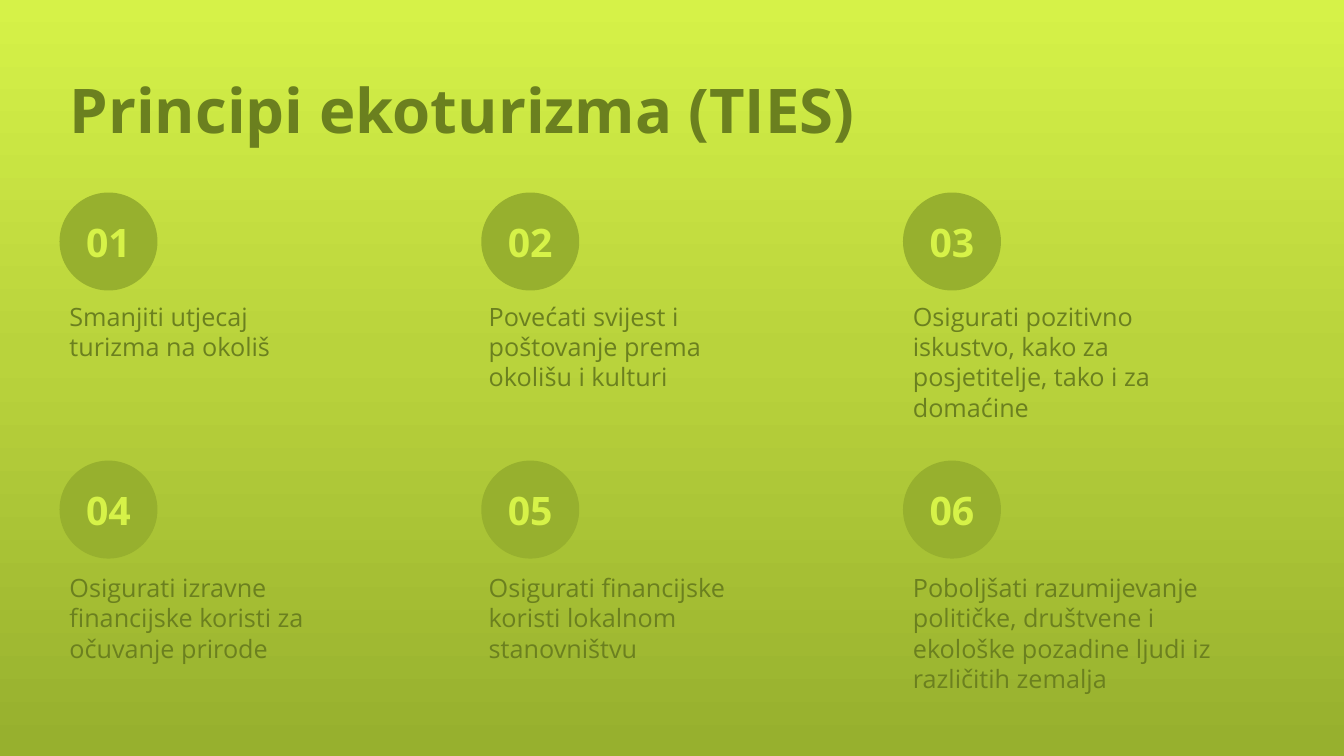
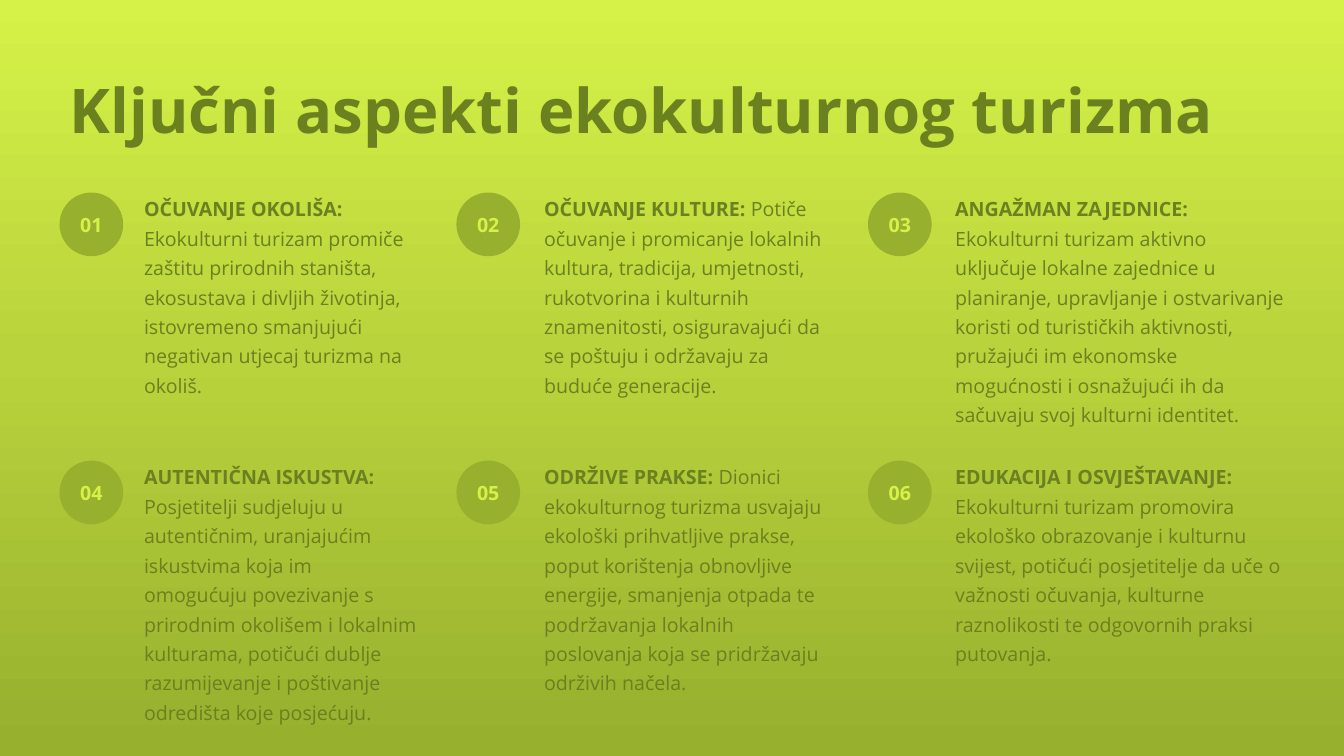
from copy import deepcopy
from dataclasses import dataclass

from pptx import Presentation
from pptx.dml.color import RGBColor
from pptx.enum.shapes import MSO_SHAPE
from pptx.enum.text import MSO_ANCHOR, MSO_AUTO_SIZE, PP_ALIGN
from pptx.oxml.ns import qn
from pptx.util import Pt


@dataclass(frozen=True)
class Theme:
    font: str = "Open Sans"
    lime: str = "D6F248"
    olive: str = "97B02E"
    text: str = "6B801F"
    gradient: tuple = ((0, "D6F248"), (47, "B9D33C"), (99, "97B02E"))
    title_size: int = 44


@dataclass(frozen=True)
class Grid:
    """Column and row positions, in points, of numbered badges and their texts."""
    badge_lefts: tuple
    badge_tops: tuple
    badge_size: float
    badge_font: int
    text_lefts: tuple
    text_tops: tuple
    text_widths: tuple
    text_height: float
    text_font: int
    line_spacing: float


THEME = Theme()
SLIDE_SIZE = (960, 540)
TITLE_BOX = (42.5, 28.8, 850, 104.4)
BADGE_TOPS = (137.5, 329)

PRINCIPLES_GRID = Grid(
    badge_lefts=(42.5, 343.75, 645), badge_tops=BADGE_TOPS,
    badge_size=70, badge_font=28,
    text_lefts=(42.5, 342, 645), text_tops=(211.7, 405.4),
    text_widths=(192, 209, 238), text_height=94, text_font=18, line_spacing=1)

ASPECTS_GRID = Grid(
    badge_lefts=(42.5, 326, 620), badge_tops=BADGE_TOPS,
    badge_size=45.5, badge_font=14,
    text_lefts=(95.8, 381.6, 675.2), text_tops=(133.2, 324.7),
    text_widths=(210, 219, 250), text_height=175, text_font=14, line_spacing=1.25)

# Each item is a list of paragraphs; each paragraph is a (bold lead, body) pair.
PRINCIPLES = [
    [("", "Smanjiti utjecaj turizma na okoliš")],
    [("", "Povećati svijest i poštovanje prema okolišu i kulturi")],
    [("", "Osigurati pozitivno iskustvo, kako za posjetitelje, tako i za domaćine")],
    [("", "Osigurati izravne financijske koristi za očuvanje prirode")],
    [("", "Osigurati financijske koristi lokalnom stanovništvu")],
    [("", "Poboljšati razumijevanje političke, društvene i"),
     ("", "ekološke pozadine ljudi iz različitih zemalja")],
]
ASPECTS = [
    [("OČUVANJE OKOLIŠA: ",
      "Ekokulturni turizam promiče zaštitu prirodnih staništa, ekosustava i divljih "
      "životinja, istovremeno smanjujući negativan utjecaj turizma na okoliš.")],
    [("OČUVANJE KULTURE: ",
      "Potiče očuvanje i promicanje lokalnih kultura, tradicija, umjetnosti, rukotvorina "
      "i kulturnih znamenitosti, osiguravajući da se poštuju i održavaju za buduće "
      "generacije.")],
    [("ANGAŽMAN ZAJEDNICE: ",
      "Ekokulturni turizam aktivno uključuje lokalne zajednice u planiranje, upravljanje "
      "i ostvarivanje koristi od turističkih aktivnosti, pružajući im ekonomske "
      "mogućnosti i osnažujući ih da sačuvaju svoj kulturni identitet.")],
    [("AUTENTIČNA ISKUSTVA: ",
      "Posjetitelji sudjeluju u autentičnim, uranjajućim iskustvima koja im omogućuju "
      "povezivanje s prirodnim okolišem i lokalnim kulturama, potičući dublje "
      "razumijevanje i poštivanje odredišta koje posjećuju.")],
    [("ODRŽIVE PRAKSE: ",
      "Dionici ekokulturnog turizma usvajaju ekološki prihvatljive prakse, poput "
      "korištenja obnovljive energije, smanjenja otpada te podržavanja lokalnih "
      "poslovanja koja se pridržavaju održivih načela.")],
    [("EDUKACIJA I OSVJEŠTAVANJE: ",
      "Ekokulturni turizam promovira ekološko obrazovanje i kulturnu svijest, potičući "
      "posjetitelje da uče o važnosti očuvanja, kulturne raznolikosti te odgovornih "
      "praksi putovanja.")],
]
SLIDES = [
    ("Principi ekoturizma (TIES)", PRINCIPLES_GRID, PRINCIPLES),
    ("Ključni aspekti ekokulturnog turizma", ASPECTS_GRID, ASPECTS),
]


def set_font(paragraph, size, color, bold=False):
    font = paragraph.font
    font.name, font.size, font.bold = THEME.font, Pt(size), bold
    font.color.rgb = RGBColor.from_string(color)


def set_background(master):
    """Give the master, and so every slide, the vertical gradient."""
    fill = master.background.fill
    fill.gradient()
    fill.gradient_angle = 270
    stops = master.element.find(".//" + qn("a:gsLst"))
    template = deepcopy(stops[0])
    for stop in list(stops):
        stops.remove(stop)
    for _ in THEME.gradient:
        stops.append(deepcopy(template))
    for stop, (percent, color) in zip(fill.gradient_stops, THEME.gradient):
        stop.position = percent / 100
        stop.color.rgb = RGBColor.from_string(color)


def set_title(slide, text):
    title = slide.shapes.title
    title.left, title.top, title.width, title.height = map(Pt, TITLE_BOX)
    frame = title.text_frame
    frame.text = text
    frame.auto_size = MSO_AUTO_SIZE.NONE
    frame.vertical_anchor = MSO_ANCHOR.MIDDLE
    paragraph = frame.paragraphs[0]
    paragraph.alignment = PP_ALIGN.LEFT
    paragraph.line_spacing = 0.9
    set_font(paragraph, THEME.title_size, THEME.text, bold=True)


def add_badge(slide, number, left, top, size, font_size):
    badge = slide.shapes.add_shape(
        MSO_SHAPE.OVAL, Pt(left), Pt(top), Pt(size), Pt(size))
    badge.shadow.inherit = False
    badge.fill.solid()
    badge.fill.fore_color.rgb = RGBColor.from_string(THEME.olive)
    badge.line.fill.background()
    frame = badge.text_frame
    frame.text = f"{number:02d}"
    frame.word_wrap = False
    frame.vertical_anchor = MSO_ANCHOR.MIDDLE
    frame.paragraphs[0].alignment = PP_ALIGN.CENTER
    set_font(frame.paragraphs[0], font_size, THEME.lime, bold=True)


def add_item_text(slide, paragraphs, left, top, width, grid):
    box = slide.shapes.add_textbox(Pt(left), Pt(top), Pt(width), Pt(grid.text_height))
    frame = box.text_frame
    frame.word_wrap = True
    frame.auto_size = MSO_AUTO_SIZE.SHAPE_TO_FIT_TEXT
    for index, (lead, body) in enumerate(paragraphs):
        paragraph = frame.add_paragraph() if index else frame.paragraphs[0]
        paragraph.line_spacing = grid.line_spacing
        set_font(paragraph, grid.text_font, THEME.text)
        if lead:
            run = paragraph.add_run()
            run.text = lead
            run.font.bold = True
        paragraph.add_run().text = body


def add_items(slide, grid, items):
    for index, paragraphs in enumerate(items):
        row, column = divmod(index, len(grid.badge_lefts))
        add_badge(slide, index + 1, grid.badge_lefts[column], grid.badge_tops[row],
                  grid.badge_size, grid.badge_font)
        add_item_text(slide, paragraphs, grid.text_lefts[column], grid.text_tops[row],
                      grid.text_widths[column], grid)


def main():
    presentation = Presentation()
    presentation.slide_width, presentation.slide_height = map(Pt, SLIDE_SIZE)
    set_background(presentation.slide_master)
    title_only = presentation.slide_layouts.get_by_name("Title Only")
    for title, grid, items in SLIDES:
        slide = presentation.slides.add_slide(title_only)
        set_title(slide, title)
        add_items(slide, grid, items)
    presentation.save("out.pptx")


if __name__ == "__main__":
    main()
